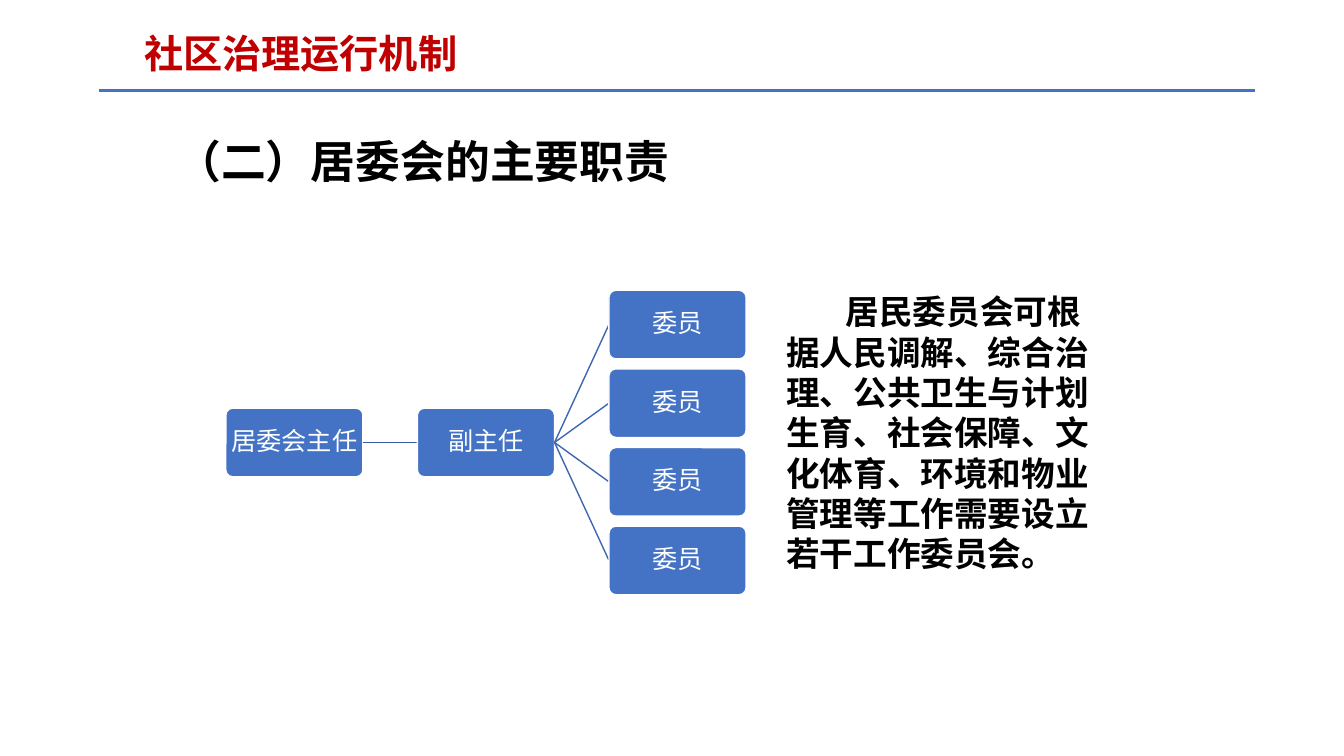
import pptx
import pptx.util
import pptx.dml.color
import pptx.enum.shapes
import pptx.enum.text
import pptx.oxml
import pptx.oxml.ns

Inches = pptx.util.Inches
Pt = pptx.util.Pt
ALIGN = pptx.enum.text.PP_ALIGN
ANCHOR = pptx.enum.text.MSO_ANCHOR


def color(value):
    return pptx.dml.color.RGBColor.from_string(value)


class SlideBuilder:
    font = "Noto Sans CJK SC"
    blue, link_blue, white = "4472C4", "3E67B2", "FFFFFF"

    def __init__(self, slide):
        self.s = slide

    def fill_text(self, tf, text, size, hex_color, bold=False, indent=0, **formats):
        tf.word_wrap = True
        p = tf.paragraphs[0]
        for name, value in formats.items():
            setattr(p, name, value)
        if indent:
            p._p.get_or_add_pPr().set("indent", str(Inches(indent)))
        r = p.add_run()
        r.text = text
        for name, value in {"name": self.font, "size": Pt(size), "bold": bold}.items():
            setattr(r.font, name, value)
        r.font.color.rgb = color(hex_color)
        ea = pptx.oxml.parse_xml(f'<a:ea {pptx.oxml.ns.nsdecls("a")} typeface="{self.font}"/>')
        r._r.rPr.find(pptx.oxml.ns.qn("a:latin")).addnext(ea)

    def text(self, text, x, y, w, h, size, hex_color, **formats):
        sp = self.s.shapes.add_textbox(Inches(x), Inches(y), Inches(w), Inches(h))
        self.fill_text(sp.text_frame, text, size, hex_color, bold=True, **formats)

    def box(self, text, x, y, w, h):
        sp = self.s.shapes.add_shape(
            pptx.enum.shapes.MSO_SHAPE.ROUNDED_RECTANGLE,
            Inches(x), Inches(y), Inches(w), Inches(h))
        sp.shadow.inherit = False
        sp.adjustments[0] = 0.1
        sp.fill.solid()
        sp.fill.fore_color.rgb = color(self.blue)
        sp.line.color.rgb = color(self.white)
        sp.line.width = Pt(1)
        tf = sp.text_frame
        for side in ("left", "right", "top", "bottom"):
            setattr(tf, f"margin_{side}", Inches(0.03))
        tf.vertical_anchor = ANCHOR.MIDDLE
        self.fill_text(tf, text, 18, self.white, alignment=ALIGN.CENTER, line_spacing=0.9)

    def line(self, x1, y1, x2, y2, hex_color, width):
        sp = self.s.shapes.add_connector(
            pptx.enum.shapes.MSO_CONNECTOR.STRAIGHT,
            Inches(x1), Inches(y1), Inches(x2), Inches(y2))
        sp.line.color.rgb = color(hex_color)
        sp.line.width = Pt(width)
        sp._element.spPr.append(
            pptx.oxml.parse_xml(f'<a:effectLst {pptx.oxml.ns.nsdecls("a")}/>'))


def main():
    prs = pptx.Presentation()
    prs.slide_width, prs.slide_height = Inches(13.33), Inches(7.5)
    b = SlideBuilder(prs.slides.add_slide(prs.slide_layouts[6]))

    # Header and section heading
    b.line(0.98, 0.9, 12.45, 0.9, b.blue, 2.25)
    b.text("社区治理运行机制", 1.33, 0.24, 7.05, 0.57, 28, "C00000")
    b.text("（二）居委会的主要职责", 1.65, 1.28, 5.16, 2.26, 32, "000000")

    # Explanation
    b.text("居民委员会可根据人民调解、综合治理、公共卫生与计划生育、社会保障、"
           "文化体育、环境和物业管理等工作需要设立若干工作委员会。",
           7.7, 2.84, 3.33, 2.93, 24, "000000", indent=0.59)

    # Organisation chart: chair, deputy, then a column of members
    box_w, box_h, gap, pitch = 1.36, 0.68, 0.54, 0.78
    chair_x, mid_y, members = 2.24, 4.39, 4
    deputy_x, member_x = (chair_x + i * (box_w + gap) for i in (1, 2))
    top = mid_y - box_h / 2

    b.box("居委会主任", chair_x, top, box_w, box_h)
    b.line(chair_x + box_w, mid_y, deputy_x, mid_y, "365B9D", 1)
    b.box("副主任", deputy_x, top, box_w, box_h)
    for i in range(members):
        offset = (i - (members - 1) / 2) * pitch
        b.line(deputy_x + box_w, mid_y, member_x, mid_y + offset, b.link_blue, 1)
        b.box("委员", member_x, top + offset, box_w, box_h)

    prs.save("out.pptx")


if __name__ == "__main__":
    main()
